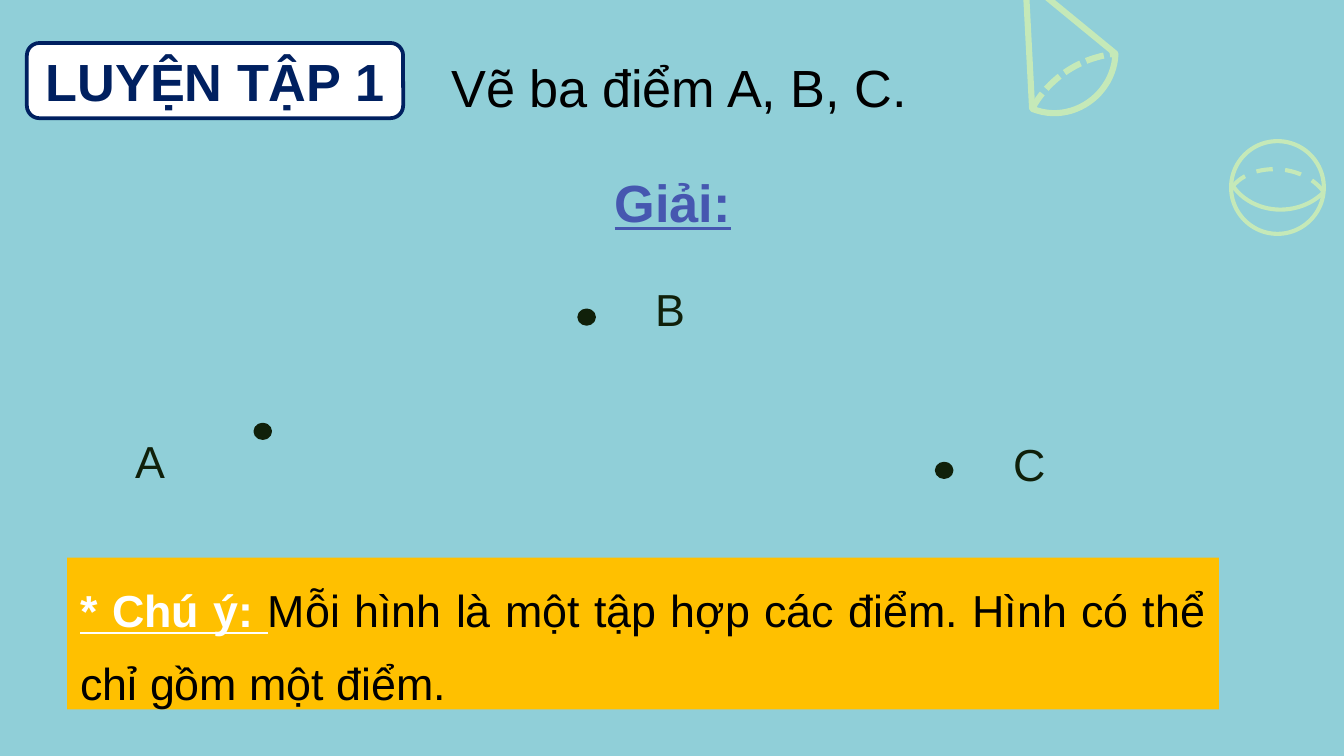
from pptx import Presentation
from pptx.dml.color import RGBColor
from pptx.enum.dml import MSO_LINE
from pptx.enum.shapes import MSO_SHAPE
from pptx.enum.text import MSO_ANCHOR, MSO_AUTO_SIZE, PP_ALIGN
from pptx.util import Inches, Pt

SKY = RGBColor(0x90, 0xCF, 0xD8)
LIME = RGBColor(0xC5, 0xE9, 0xB8)
NAVY = RGBColor(0x00, 0x20, 0x60)
INDIGO = RGBColor(0x46, 0x57, 0xB0)
INK = RGBColor(0x10, 0x20, 0x0A)
AMBER = RGBColor(0xFF, 0xC0, 0x00)
BLACK = RGBColor(0, 0, 0)
WHITE = RGBColor(0xFF, 0xFF, 0xFF)


def add_text(sp, text, size=28, color=BLACK, bold=False, underline=False,
             align=PP_ALIGN.LEFT, grow=True):
    tf = sp.text_frame
    tf.word_wrap = True
    tf.auto_size = MSO_AUTO_SIZE.SHAPE_TO_FIT_TEXT if grow else MSO_AUTO_SIZE.NONE
    p = tf.paragraphs[0]
    p.alignment = align
    r = p.add_run()
    r.text = text
    r.font.name = "Arial"
    r.font.size = Pt(size)
    r.font.bold = bold
    r.font.underline = underline
    r.font.color.rgb = color
    return p


def curve_points(a, b, c, d, steps=24):
    points = []
    for i in range(steps + 1):
        t = i / steps
        weights = ((1 - t) ** 3, 3 * t * (1 - t) ** 2, 3 * t * t * (1 - t), t ** 3)
        points.append(tuple(Inches(sum(w * q[k] for w, q in zip(weights, (a, b, c, d))))
                            for k in (0, 1)))
    return points


prs = Presentation()
prs.slide_width = Inches(10)
prs.slide_height = Inches(10 * 9 / 16)
s = prs.slides.add_slide(prs.slide_layouts[6])
s.background.fill.solid()
s.background.fill.fore_color.rgb = SKY

sphere = s.shapes.add_shape(MSO_SHAPE.OVAL, Inches(9.16), Inches(1.05), Inches(0.69), Inches(0.69))
sphere.shadow.inherit = False
sphere.fill.background()
sphere.line.color.rgb = LIME
sphere.line.width = Pt(2.2)

sphere_back = curve_points((9.17, 1.39), (9.32, 1.2), (9.7, 1.22), (9.85, 1.43))
sphere_front = curve_points((9.17, 1.38), (9.32, 1.6), (9.66, 1.62), (9.85, 1.43))
cone_back = curve_points((7.68, 0.81), (7.78, 0.62), (8, 0.43), (8.3, 0.4))
cone_front = curve_points((7.68, 0.81), (7.98, 0.93), (8.29, 0.7), (8.3, 0.4))
cone = [(Inches(7.63), Inches(-0.15))] + cone_front

for points, width, closed, dash in [
    (sphere_back, 2.2, False, MSO_LINE.DASH),
    (sphere_front, 2.2, False, MSO_LINE.SOLID),
    (cone_back, 3.3, False, MSO_LINE.SQUARE_DOT),
    (cone, 3.3, True, MSO_LINE.SOLID),
]:
    fb = s.shapes.build_freeform(*points[0])
    fb.add_line_segments(points[1:], close=closed)
    sp = fb.convert_to_shape()
    sp.shadow.inherit = False
    sp.fill.background()
    sp.line.color.rgb = LIME
    sp.line.width = Pt(width)
    sp.line.dash_style = dash

badge = s.shapes.add_shape(MSO_SHAPE.ROUNDED_RECTANGLE, Inches(0.2), Inches(0.32),
                           Inches(2.8), Inches(0.56))
badge.shadow.inherit = False
badge.fill.solid()
badge.fill.fore_color.rgb = WHITE
badge.line.color.rgb = NAVY
badge.line.width = Pt(2)
badge.text_frame.vertical_anchor = MSO_ANCHOR.MIDDLE
add_text(badge, "LUYỆN TẬP 1", color=NAVY, bold=True, align=PP_ALIGN.CENTER, grow=False)

task = s.shapes.add_textbox(Inches(3.26), Inches(0.36), Inches(4), Inches(0.57))
add_text(task, "Vẽ ba điểm A, B, C.")

heading = s.shapes.add_textbox(Inches(4.33), Inches(1.22), Inches(1.35), Inches(0.57))
add_text(heading, "Giải:", color=INDIGO, bold=True, underline=True, align=PP_ALIGN.CENTER)

for name, dot_x, dot_y, label_x, label_y, label_w, label_h in [
    ("A", 1.9, 3.16, 0.91, 3.18, 0.57, 0.52),
    ("B", 4.31, 2.31, 4.78, 2.05, 1.07, 0.5),
    ("C", 6.97, 3.45, 7.44, 3.2, 1.07, 0.5),
]:
    dot = s.shapes.add_shape(MSO_SHAPE.OVAL, Inches(dot_x), Inches(dot_y), Inches(0.11), Inches(0.1))
    dot.shadow.inherit = False
    dot.fill.solid()
    dot.fill.fore_color.rgb = INK
    dot.line.color.rgb = INK
    dot.line.width = Pt(2)
    label = s.shapes.add_textbox(Inches(label_x), Inches(label_y), Inches(label_w), Inches(label_h))
    add_text(label, name, size=24, color=INK)

note = s.shapes.add_shape(MSO_SHAPE.RECTANGLE, Inches(0.5), Inches(4.15), Inches(8.57), Inches(1.13))
note.shadow.inherit = False
note.fill.solid()
note.fill.fore_color.rgb = AMBER
note.line.fill.background()
note.text_frame.vertical_anchor = MSO_ANCHOR.TOP
add_text(note, "* Chú ý: ", size=24, color=WHITE, bold=True, underline=True)
p = add_text(note, "Mỗi hình là một tập hợp các điểm. Hình có thể chỉ gồm một điểm.",
             size=24, align=PP_ALIGN.JUSTIFY)
p.line_spacing = 1.35
p.space_before = p.space_after = Pt(6)

prs.save("out.pptx")
